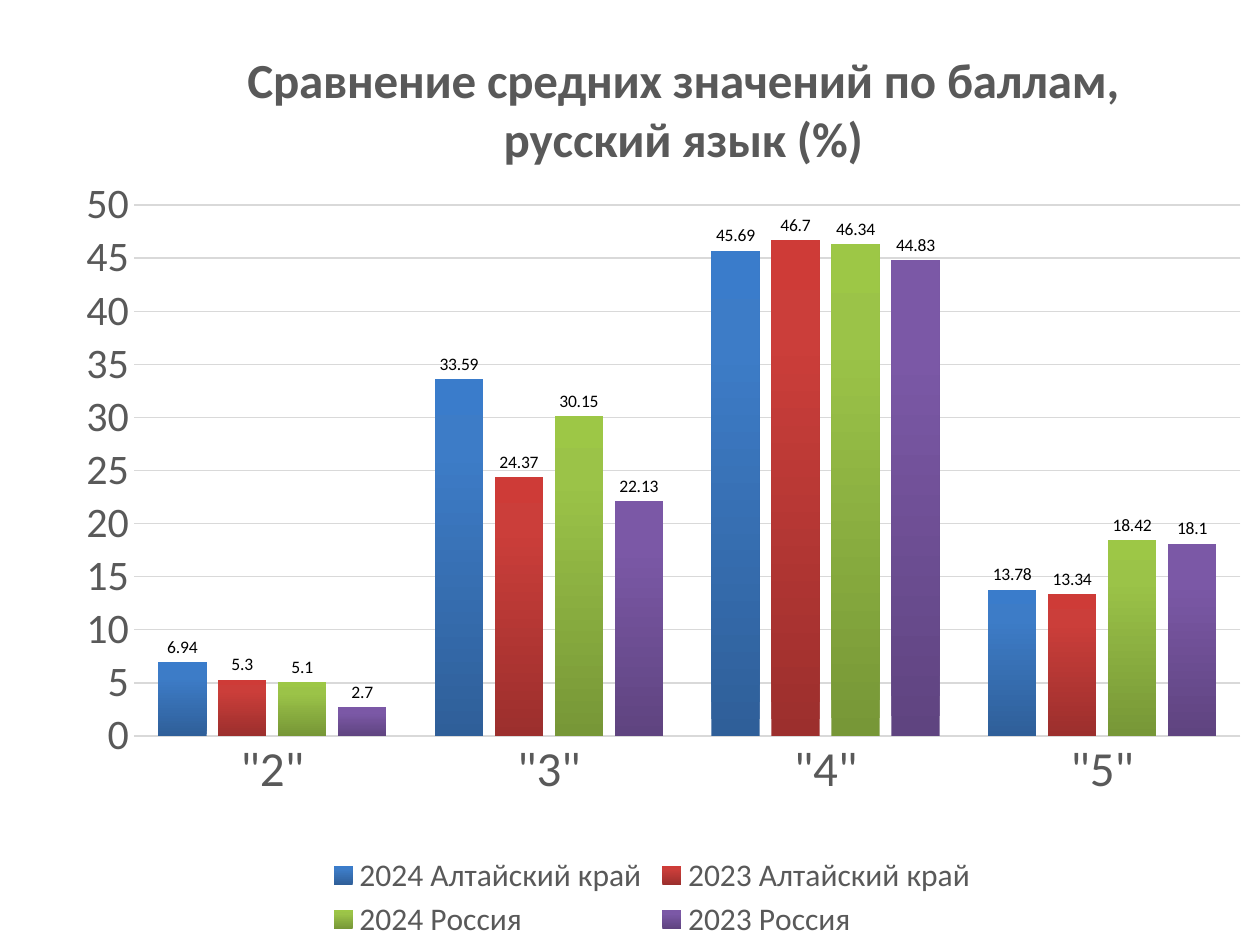
"""Build a slide with a clustered column chart of Russian language marks."""
from copy import deepcopy

from pptx import Presentation
from pptx.chart.data import CategoryChartData
from pptx.dml.color import RGBColor
from pptx.enum.chart import XL_CHART_TYPE as ChartType
from pptx.enum.chart import XL_LABEL_POSITION as LabelPosition
from pptx.enum.chart import XL_LEGEND_POSITION as LegendPosition
from pptx.enum.chart import XL_TICK_MARK as TickMark
from pptx.oxml import parse_xml
from pptx.oxml.ns import nsdecls, qn
from pptx.util import Emu, Pt

PX = 914400 / 126
THEME = {
    "font": "Calibri",
    "text": "595959",
    "label": "000000",
    "line": "D9D9D9",
    "sizes": {"title": 28, "category": 28, "value": 24, "legend": 18, "label": 10},
    "gradients": [
        ("2F5F99", "3D7CC7", "3A7CCB"),
        ("9C2F2D", "CB3E3A", "CE3B37"),
        ("779737", "9BC348", "9DC746"),
        ("5F4480", "7B58A6", "7C57A8"),
    ],
    "stops": (0, 0.8, 1),
}
MARKS = ['"2"', '"3"', '"4"', '"5"']
RESULTS = {
    "2024 Алтайский край": (6.94, 33.59, 45.69, 13.78),
    "2023 Алтайский край": (5.3, 24.37, 46.7, 13.34),
    "2024 Россия": (5.1, 30.15, 46.34, 18.42),
    "2023 Россия": (2.7, 22.13, 44.83, 18.1),
}


def style_font(font, role, color=THEME["text"], bold=False):
    values = {"name": THEME["font"], "size": Pt(THEME["sizes"][role]), "bold": bold}
    for name, value in values.items():
        setattr(font, name, value)
    font.color.rgb = RGBColor.from_string(color)


def place(parent, index, **settings):
    for old in parent.findall(qn("c:layout")):
        parent.remove(old)
    items = "".join(f'<c:{name} val="{value}"/>' for name, value in settings.items())
    parent.insert(index, parse_xml(
        f'<c:layout {nsdecls("c")}><c:manualLayout>{items}</c:manualLayout></c:layout>'))


deck = Presentation()
deck.slide_width, deck.slide_height = Emu(round(1260 * PX)), Emu(round(945 * PX))
page = deck.slides.add_slide(deck.slide_layouts[6])

data = CategoryChartData()
data.categories = MARKS
for name, values in RESULTS.items():
    data.add_series(name, values)
bounds = [Emu(round(length * PX)) for length in (44, 0, 1216, 945)]
chart = page.shapes.add_chart(ChartType.COLUMN_CLUSTERED, *bounds, data).chart
style_font(chart.font, "label", THEME["label"])

chart.has_title = True
title = chart.chart_title
title.include_in_layout = False
para = title.text_frame.paragraphs[0]
span = para.add_run()
span.text = "Сравнение средних значений по баллам, русский язык (%)"
style_font(span.font, "title", bold=True)
place(title._element, 1, xMode="edge", yMode="edge", x=0.16, y=0.04)

chart.has_legend = True
chart.legend.position = LegendPosition.BOTTOM
chart.legend.include_in_layout = False
style_font(chart.legend.font, "legend")

for axis, role in ((chart.category_axis, "category"), (chart.value_axis, "value")):
    axis.major_tick_mark = axis.minor_tick_mark = TickMark.NONE
    style_font(axis.tick_labels.font, role)
line = chart.category_axis.format.line
grid = chart.value_axis.major_gridlines.format.line
for stroke, width in ((line, 1), (grid, 0.75)):
    stroke.color.rgb = RGBColor.from_string(THEME["line"])
    stroke.width = Pt(width)
scale = {"minimum_scale": 0, "maximum_scale": 50, "major_unit": 5}
for name, value in scale.items():
    setattr(chart.value_axis, name, value)
chart.value_axis.format.line.fill.background()

plot = chart.plots[0]
plot.gap_width, plot.overlap, plot.vary_by_categories = 100, -24, False
place(chart._chartSpace.find(".//" + qn("c:plotArea")), 0, layoutTarget="inner",
      xMode="edge", yMode="edge", x=0.074, y=0.217, w=0.91, h=0.562)

for series, colors in zip(plot.series, THEME["gradients"]):
    fill = series.format.fill
    fill.gradient()
    fill.gradient_angle = 90
    stops = series._element.find(".//" + qn("a:gsLst"))
    stops.append(deepcopy(stops[0]))
    for stop, color, position in zip(fill.gradient_stops, colors, THEME["stops"]):
        stop.color.rgb = RGBColor.from_string(color)
        stop.position = position
    series.invert_if_negative = False
    labels = series.data_labels
    labels.show_value = True
    labels.position = LabelPosition.OUTSIDE_END
    style_font(labels.font, "label", THEME["label"])

deck.save("out.pptx")
